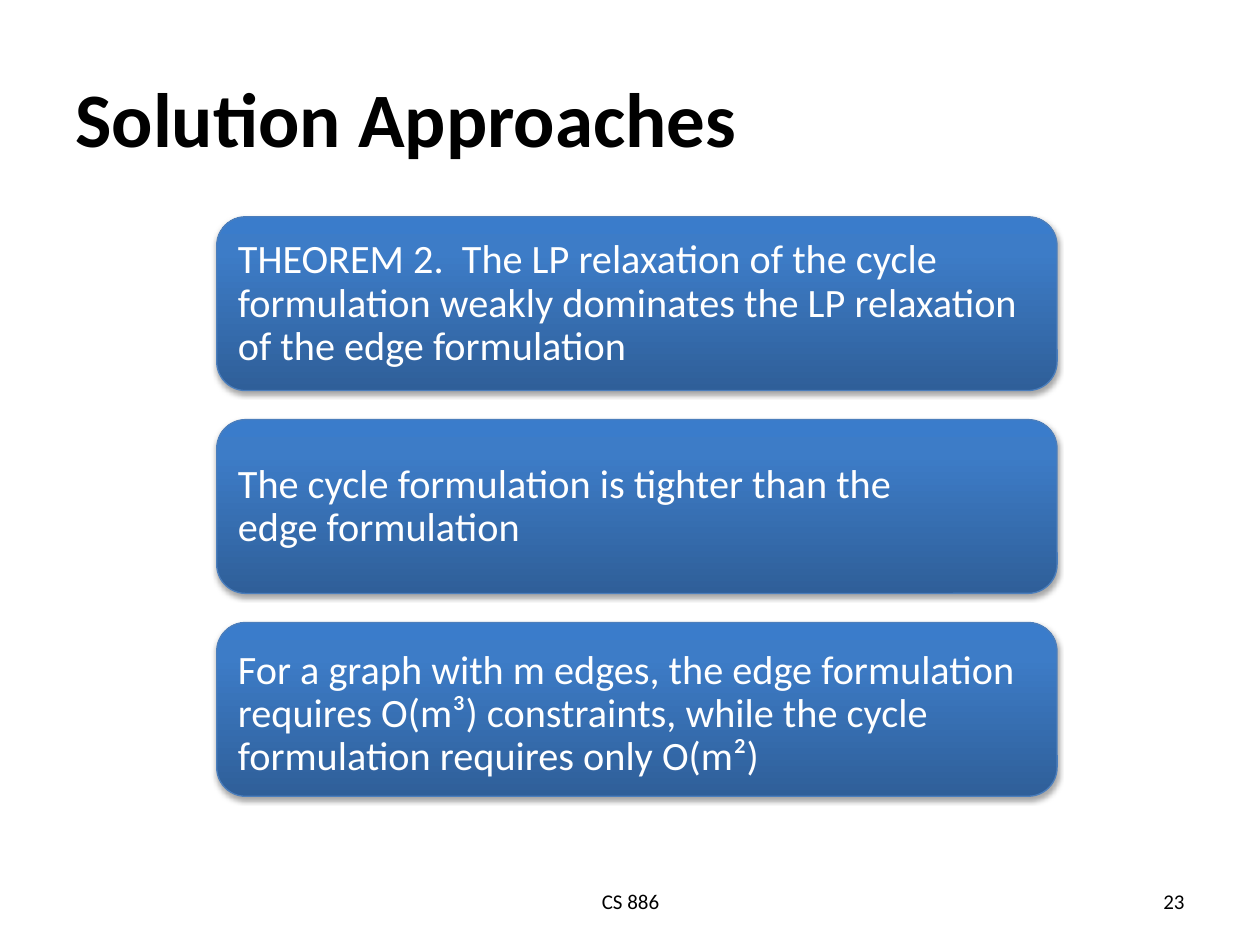
"""Build the "Solution Approaches" slide with three theorem cards."""
from lxml import etree
from pptx import Presentation
from pptx.dml.color import RGBColor
from pptx.enum.shapes import MSO_SHAPE
from pptx.enum.text import MSO_ANCHOR, PP_ALIGN
from pptx.oxml import parse_xml
from pptx.oxml.ns import qn
from pptx.util import Inches, Pt

ROUNDED = MSO_SHAPE.ROUNDED_RECTANGLE
MIDDLE = MSO_ANCHOR.MIDDLE
LEFT, CENTER, RIGHT = PP_ALIGN.LEFT, PP_ALIGN.CENTER, PP_ALIGN.RIGHT

BLACK = RGBColor(0x00, 0x00, 0x00)
WHITE = RGBColor(0xFF, 0xFF, 0xFF)
CARD_EDGE = RGBColor(0x4B, 0x7E, 0xBC)
CARD_STOPS = (
    (0, RGBColor(0x2F, 0x5F, 0x99)),
    (80, RGBColor(0x3D, 0x7C, 0xC7)),
    (100, RGBColor(0x3A, 0x7C, 0xCB)),
)
DRAWING_NS = "http://schemas.openxmlformats.org/drawingml/2006/main"

CARD_LEFT, CARD_TOP, CARD_WIDTH, CARD_HEIGHT = 1.72, 1.72, 6.67, 1.38
CARD_PITCH = 1.61
CARD_PADDING = 0.07
STATEMENTS = (
    (["THEOREM 2.  The LP relaxation of the cycle formulation weakly dominates "
      "the LP relaxation of the edge formulation"], 6.53, 1.25),
    (["The cycle formulation is tighter than the ", "edge formulation"], 6.53, 1.25),
    (["For a graph with m edges, the edge formulation requires O(m³) constraints, "
      "while the cycle formulation requires only O(m²)"], 6.5, 1.32),
)


class SlideBuilder:
    """Hold the text style and the slide being filled."""

    font_name = "Calibri"

    def __init__(self, slide):
        self.slide = slide

    def text(self, lines, left, top, width, height, size, color=BLACK, bold=False,
             align=LEFT, spacing=1.0, inset=None, shapes=None):
        """Add a middle-anchored text box, with a line break between lines."""
        box = (shapes or self.slide.shapes).add_textbox(
            Inches(left), Inches(top), Inches(width), Inches(height))
        frame = box.text_frame
        frame.word_wrap = True
        frame.vertical_anchor = MIDDLE
        if inset is not None:
            frame.margin_left = frame.margin_right = Inches(inset)
            frame.margin_top = frame.margin_bottom = Inches(inset)
        paragraph = frame.paragraphs[0]
        paragraph.alignment = align
        paragraph.line_spacing = spacing
        for index, line in enumerate(lines):
            if index:
                paragraph.add_line_break()
            run = paragraph.add_run()
            run.text = line
            run.font.name = self.font_name
            run.font.size = Pt(size)
            run.font.bold = bold
            run.font.color.rgb = color

    def card(self, lines, top, text_width, text_height):
        """Add a group of a shaded rounded panel and its statement."""
        group = self.slide.shapes.add_group_shape()
        panel = group.shapes.add_shape(
            ROUNDED, Inches(CARD_LEFT), Inches(top), Inches(CARD_WIDTH), Inches(CARD_HEIGHT))
        panel.line.color.rgb = CARD_EDGE
        panel.line.width = Pt(0.75)
        self.shade(panel)
        self.drop_shadow(panel)
        self.text(lines, CARD_LEFT + CARD_PADDING, top + CARD_PADDING, text_width,
                  text_height, 23, WHITE, spacing=0.9, inset=0.1, shapes=group.shapes)

    def shade(self, panel):
        """Fill a panel with the gradient, running from bottom to top."""
        panel.fill.gradient()
        gradient = panel.fill.gradient_stops
        panel.fill.gradient_angle = 90
        stop_list = panel.element.spPr.find(qn("a:gradFill")).find(qn("a:gsLst"))
        for stop in list(stop_list)[:len(gradient)]:
            stop_list.remove(stop)
        for percent, color in CARD_STOPS:
            stop = etree.SubElement(stop_list, qn("a:gs"), pos=str(percent * 1000))
            etree.SubElement(stop, qn("a:srgbClr"), val=str(color))

    def drop_shadow(self, panel):
        """Give a panel a soft shadow straight below it."""
        panel.shadow.inherit = False
        panel.element.spPr.find(qn("a:effectLst")).append(parse_xml(
            f'<a:outerShdw xmlns:a="{DRAWING_NS}" blurRad="{Pt(3.1)}" dist="{Pt(1.8)}" '
            'dir="5400000" rotWithShape="0"><a:srgbClr val="000000">'
            '<a:alpha val="35000"/></a:srgbClr></a:outerShdw>'))


def main():
    """Build and save the slide."""
    deck = Presentation()
    deck.slide_width, deck.slide_height = Inches(10), Inches(7.5)
    builder = SlideBuilder(deck.slides.add_slide(deck.slide_layouts[6]))
    builder.text(["Solution Approaches"], 0.5, 0.3, 9, 1.25, 44, bold=True)
    builder.text(["CS 886"], 3.42, 6.95, 3.17, 0.4, 12, align=CENTER)
    builder.text(["23"], 7.17, 6.95, 2.33, 0.4, 12, align=RIGHT)
    for row, (lines, text_width, text_height) in enumerate(STATEMENTS):
        builder.card(lines, CARD_TOP + row * CARD_PITCH, text_width, text_height)
    deck.save("out.pptx")


if __name__ == "__main__":
    main()
